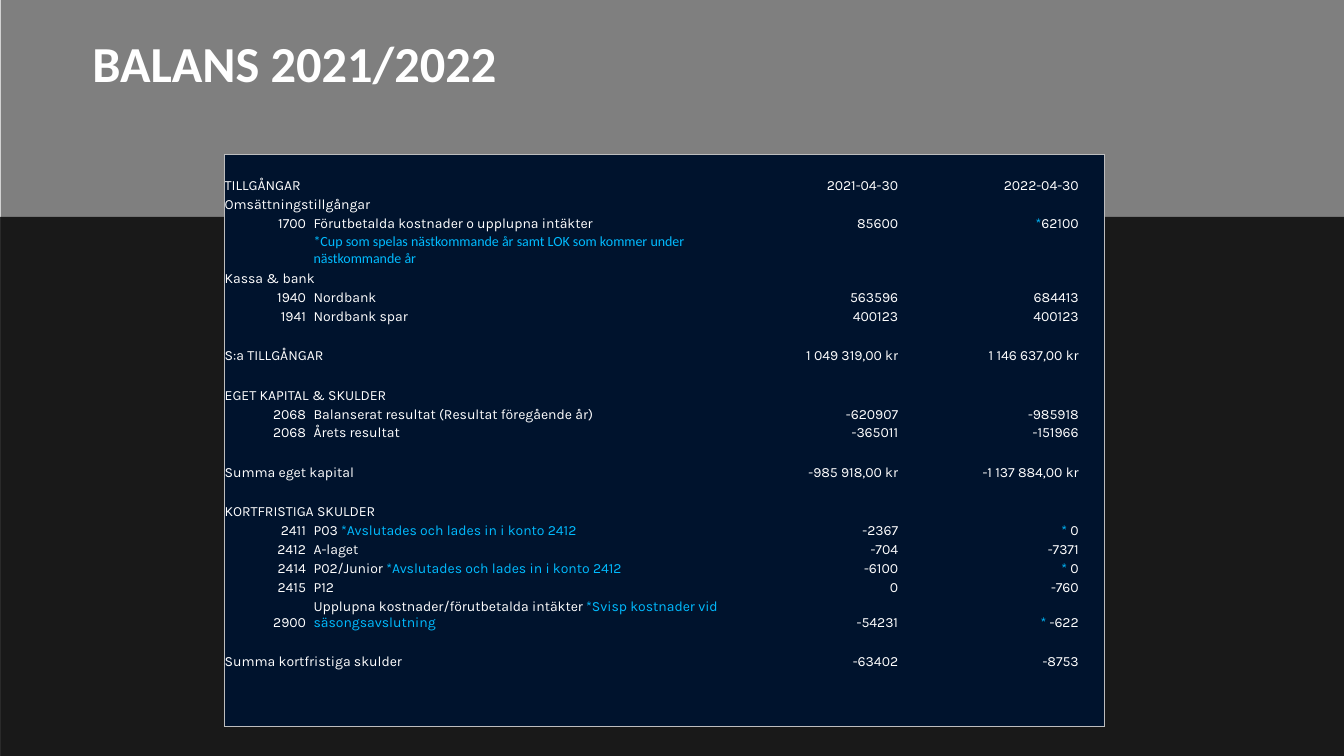
from lxml import etree
from pptx import Presentation
from pptx.dml.color import RGBColor
from pptx.enum.shapes import MSO_SHAPE
from pptx.enum.text import MSO_ANCHOR, PP_ALIGN
from pptx.oxml.ns import qn
from pptx.util import Pt

PX = 6350  # 144 px to the inch
LEFT, RIGHT = PP_ALIGN.LEFT, PP_ALIGN.RIGHT
BOTTOM = MSO_ANCHOR.BOTTOM
RECT = MSO_SHAPE.RECTANGLE
PLAIN = "{2D5ABB26-0587-4C30-8999-92F81FD0307C}"  # table style without grid
HUES = {"white": "FFFFFF", "black": "000000", "blue": "00BBFF",
        "navy": "00132D", "edge": "BDBDBE"}


def write(frame, text, size=10, font="Karla", bold=False, align=LEFT):
    """Write text; every second part between bars is blue."""
    para = frame.paragraphs[0]
    para.alignment = align
    for i, part in enumerate(text.split("|")):
        if part:
            run = para.add_run()
            run.text = part
            run.font.size, run.font.name, run.font.bold = Pt(size), font, bold
            hue = HUES["blue" if i % 2 else "white"]
            run.font.color.rgb = RGBColor.from_string(hue)
    if not text:
        etree.SubElement(para._p, qn("a:endParaRPr"), sz="800")
    return para


def edge(cell, side):
    """Draw one thin border of a cell."""
    line = etree.SubElement(cell._tc.get_or_add_tcPr(), qn("a:ln" + side), w="6350")
    fill = etree.SubElement(line, qn("a:solidFill"))
    etree.SubElement(fill, qn("a:srgbClr"), val=HUES["edge"])


deck = Presentation()
deck.slide_width, deck.slide_height = 1920 * PX, 1080 * PX
slide = deck.slides.add_slide(deck.slide_layouts[5])
tree = slide.shapes

# Dark veils behind everything
for x, y, w, h, alpha in [(1, 0, 1919, 1080, 50), (0, 310, 1920, 770, 80)]:
    veil = tree.add_shape(RECT, x * PX, y * PX, w * PX, h * PX)
    veil.shadow.inherit = False
    veil.line.fill.background()
    veil.fill.solid()
    veil.fill.fore_color.rgb = RGBColor.from_string(HUES["black"])
    tone = veil._element.spPr.find(qn("a:solidFill"))[0]
    etree.SubElement(tone, qn("a:alpha"), val=str(alpha * 1000))

# Title, above the veils
title = tree.title
title.left, title.top, title.width, title.height = (n * PX for n in (132, 48, 1656, 86))
frame = title.text_frame
frame.margin_left = frame.margin_right = frame.margin_top = frame.margin_bottom = 0
frame.vertical_anchor = BOTTOM
frame.word_wrap = True
write(frame, "BALANS 2021/2022", size=36, font="Calibri", bold=True).line_spacing = 0.9
tree._spTree.append(title._element)

# Balance rows: kind, account, text, first year, second year
HIGH = {"gap": 24, "head": 33, "line": 27, "blank": 28, "sum": 28, "tall": 50}
GAP, BLANK = ("gap", "", "", "", ""), ("blank", "", "", "", "")
ROWS = [
    GAP,
    ("head", "", "TILLGÅNGAR", "2021-04-30", "2022-04-30"),
    ("sum", "", "Omsättningstillgångar", "", ""),
    ("line", "1700", "Förutbetalda kostnader o upplupna intäkter", "85600", "|*|62100"),
    ("tall", "", "|*Cup som spelas nästkommande år samt LOK som kommer under "
     "nästkommande år", "", ""),
    ("sum", "", "Kassa & bank", "", ""),
    ("line", "1940", "Nordbank", "563596", "684413"),
    ("line", "1941", "Nordbank spar", "400123", "400123"),
    BLANK,
    ("sum", "", "S:a TILLGÅNGAR", "1 049 319,00 kr", "1 146 637,00 kr"),
    GAP,
    ("head", "", "EGET KAPITAL & SKULDER", "", ""),
    ("line", "2068", "Balanserat resultat (Resultat föregående år)", "-620907", "-985918"),
    ("line", "2068", "Årets resultat", "-365011", "-151966"),
    BLANK,
    ("sum", "", "Summa eget kapital", "-985 918,00 kr", "-1 137 884,00 kr"),
    GAP,
    ("head", "", "KORTFRISTIGA SKULDER", "", ""),
    ("line", "2411", "P03 |*Avslutades och lades in i konto 2412", "-2367", "|* |0"),
    ("line", "2412", "A-laget", "-704", "-7371"),
    ("line", "2414", "P02/Junior |*Avslutades och lades in i konto 2412", "-6100", "|* |0"),
    ("line", "2415", "P12", "0", "-760"),
    ("tall", "2900", "Upplupna kostnader/förutbetalda intäkter |*Svisp kostnader vid "
     "säsongsavslutning", "-54231", "|* |-622"),
    BLANK,
    ("sum", "", "Summa kortfristiga skulder", "-63402", "-8753"),
    GAP,
    ("head", "", "", "", ""),
    GAP,
]
COLS = [127, 644, 191, 258, 37]
ALIGN = [RIGHT, LEFT, RIGHT, RIGHT, LEFT]
high = sum(HIGH[row[0]] for row in ROWS)
grid = tree.add_table(len(ROWS), len(COLS), 321 * PX, 220 * PX,
                      sum(COLS) * PX, high * PX).table
grid.first_row = grid.horz_banding = False
grid._tbl.tblPr[0].text = PLAIN
for col, wide in zip(grid.columns, COLS):
    col.width = wide * PX

# Fill the cells
last = len(ROWS) - 1
for r, (kind, code, *rest) in enumerate(ROWS):
    grid.rows[r].height = HIGH[kind] * PX
    wide = kind in ("head", "sum")
    texts = [code, *rest, ""]
    if wide:
        grid.cell(r, 0).merge(grid.cell(r, 1))
        texts[:2] = [rest[0], ""]
    for c, text in enumerate(texts):
        cell = grid.cell(r, c)
        cell.margin_left = cell.margin_right = cell.margin_top = cell.margin_bottom = 0
        if c == 0 and not wide:
            cell.margin_right = 11 * PX
        cell.vertical_anchor = BOTTOM
        font = "Calibri" if kind == "tall" and not code else "Karla"
        write(cell.text_frame, text, font=font, align=LEFT if wide and c == 0 else ALIGN[c])
        sides = {"L": c == 0, "R": c == 4, "T": r == 0, "B": r == last}
        for side, on in sides.items():
            if on:
                edge(cell, side)
        cell.fill.solid()
        cell.fill.fore_color.rgb = RGBColor.from_string(HUES["navy"])

deck.save("out.pptx")
